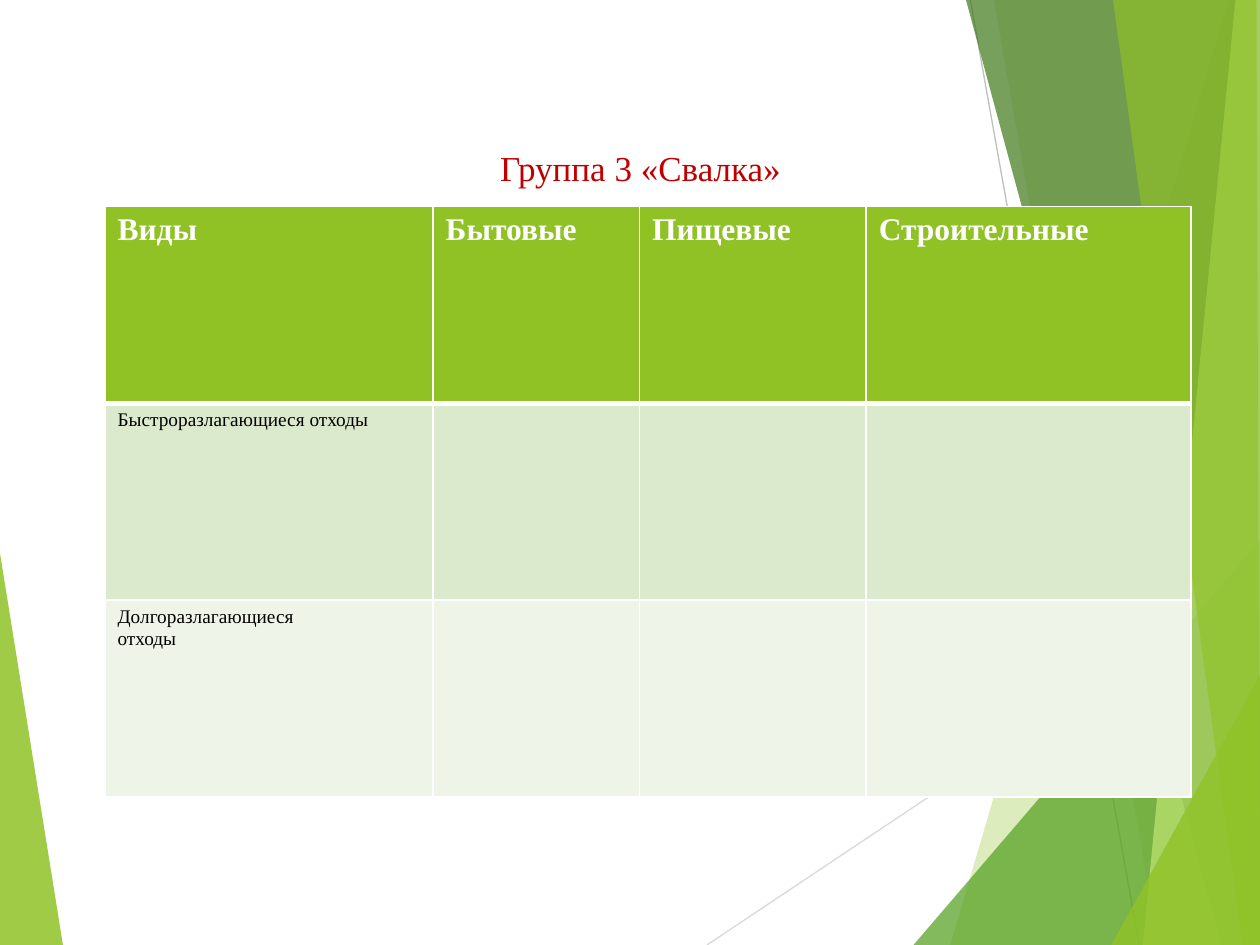
from lxml.etree import SubElement
from pptx import Presentation
from pptx.dml.color import RGBColor
from pptx.enum.shapes import MSO_CONNECTOR as Link
from pptx.enum.text import MSO_ANCHOR as Anchor, PP_ALIGN as Align
from pptx.oxml.ns import qn
from pptx.util import Pt

WHITE = RGBColor(0xFF, 0xFF, 0xFF)
BLACK = RGBColor(0, 0, 0)
RED = RGBColor(0xC0, 0, 0)
LIME = RGBColor(0x90, 0xC2, 0x26)
PALE = RGBColor(0xC0, 0xE4, 0x74)
GREEN = RGBColor(0x54, 0xA0, 0x21)
DARK = RGBColor(0x3F, 0x78, 0x19)
MINT = RGBColor(0xDB, 0xE9, 0xCD)
MIST = RGBColor(0xEE, 0xF4, 0xE8)
SILVER = RGBColor(0xD9, 0xD9, 0xD9)
GRAY = RGBColor(0xBF, 0xBF, 0xBF)

W, H = 720, 540

# Colour, opacity in percent, corner points
LEAF = (LIME, 85, [(0, 316), (35.5, H), (0, H)])
SHARDS = [
    (LIME, 30, [(702, 0), (543, H), (W, H), (W, 0)]),
    (LIME, 20, [(567.5, 0), (662, H), (W, H), (W, 0)]),
    (GREEN, 72, [(522.5, H), (W, 309), (W, H)]),
    (DARK, 70, [(552.5, 0), (698.5, H), (W, H), (W, 0)]),
    (PALE, 70, [(706.5, 0), (653, H), (W, H), (W, 0)]),
    (LIME, 65, [(636, 0), (710, H), (W, H), (718.5, 0)]),
    (LIME, 80, [(635, H), (W, 385.5), (W, H)]),
]
ROWS = [
    ["Виды", "Бытовые", "Пищевые", "Строительные"],
    ["Быстроразлагающиеся отходы", "", "", ""],
    ["Долгоразлагающиеся\nотходы", "", "", ""],
]
# Fill and text format of each table row
LOOKS = [
    (LIME, dict(size=18, color=WHITE, bold=True)),
    (MINT, dict(size=11)),
    (MIST, dict(size=11)),
]


def write(frame, text, size=11, color=BLACK, bold=False, align=Align.LEFT, font="Times New Roman"):
    frame.text = text
    for par in frame.paragraphs:
        par.alignment = align
        face = par.font
        face.name, face.size, face.bold = font, Pt(size), bold
        face.color.rgb = color
        for run in par.runs:
            run.font.name = font


class Deck:
    def __init__(self):
        self.prs = Presentation()
        self.prs.slide_width, self.prs.slide_height = Pt(W), Pt(H)
        self.slide = self.prs.slides.add_slide(self.prs.slide_layouts[6])
        self.shapes = self.slide.shapes

    def shard(self, color, alpha, dots):
        pen = self.shapes.build_freeform(*dots[0], scale=Pt(1))
        pen.add_line_segments(dots[1:], close=True)
        shape = pen.convert_to_shape()
        shape.shadow.inherit = False
        shape.line.fill.background()
        shape.fill.solid()
        shape.fill.fore_color.rgb = color
        tint = shape.fill._xPr.find(".//" + qn("a:srgbClr"))
        SubElement(tint, qn("a:alpha"), val=str(alpha * 1000))

    def line(self, start, end, color):
        ends = [Pt(v) for v in start + end]
        line = self.shapes.add_connector(Link.STRAIGHT, *ends)
        line.line.color.rgb = color
        line.line.width = Pt(0.75)
        SubElement(line._element.spPr, qn("a:effectLst"))

    def text(self, box, text, **look):
        frame = self.shapes.add_textbox(*map(Pt, box)).text_frame
        frame.word_wrap = True
        frame.vertical_anchor = Anchor.BOTTOM
        write(frame, text, **look)

    def edge(self, cell, side, width):
        """Draw one white cell border; call before the cell is filled."""
        props = cell._tc.get_or_add_tcPr()
        line = SubElement(props, qn("a:ln" + side), w=str(Pt(width)))
        SubElement(SubElement(line, qn("a:solidFill")), qn("a:srgbClr"), val=str(WHITE))

    def table(self, left, top, cols, high):
        size = sum(cols), high * len(ROWS)
        table = self.shapes.add_table(
            len(ROWS), len(cols), *map(Pt, (left, top, *size))).table
        for col, wide in zip(table.columns, cols):
            col.width = Pt(wide)
        for r, (row, (fill, look)) in enumerate(zip(ROWS, LOOKS)):
            table.rows[r].height = Pt(high)
            for c, text in enumerate(row):
                cell = table.cell(r, c)
                for side in "LRTB":
                    thick = (r, side) in [(0, "B"), (1, "T")]
                    self.edge(cell, side, 3 if thick else 1)
                cell.fill.solid()
                cell.fill.fore_color.rgb = fill
                write(cell.text_frame, text, **look)


def main():
    deck = Deck()
    deck.shard(*LEAF)
    deck.line((404, H), (W, 329), SILVER)
    deck.line((554.5, 0), (651, H), GRAY)
    for shard in SHARDS:
        deck.shard(*shard)
    deck.text((50.5, 39.5, 631, 72), "Группа 3 «Свалка»",
              size=20, color=RED, align=Align.CENTER)
    deck.table(60, 118, [187.5, 118, 129.5, 185.5], 112.5)
    deck.prs.save("out.pptx")


if __name__ == "__main__":
    main()
